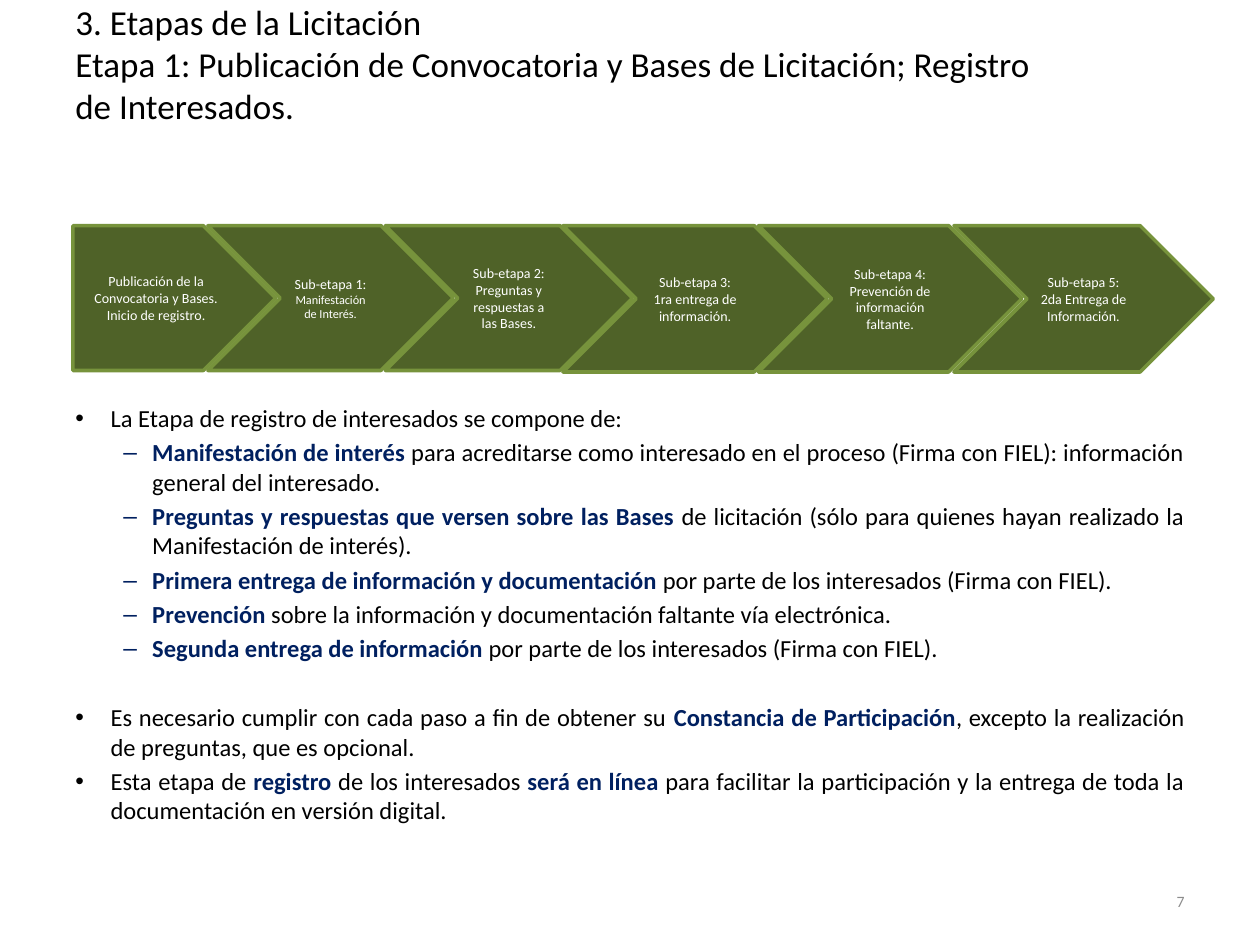
from lxml.etree import SubElement
from pptx import Presentation
from pptx.dml.color import RGBColor
from pptx.enum.shapes import MSO_SHAPE
from pptx.enum.text import MSO_ANCHOR, PP_ALIGN
from pptx.oxml.ns import qn
from pptx.util import Cm, Pt

FONT = "Calibri"
BLACK, WHITE, GREY, NAVY = "000000", "FFFFFF", "8C8C8C", "002060"
DARK_GREEN, GREEN = "4F6228", "77933C"

TITLE = ["3. Etapas de la Licitación",
         "Etapa 1: Publicación de Convocatoria y Bases de Licitación; Registro de Interesados."]
PAGE_NUMBER = "7"

# left, width, height (cm), then lines as (text, size)
STAGE_TOP = 4.55
STAGES = [
    (1.47, 4.09, 2.92, [("Publicación de la Convocatoria y Bases.", 8), ("Inicio de registro.", 8)]),
    (4.19, 4.95, 2.92, [("Sub-etapa 1:", 8), ("Manifestación de Interés.", 7)]),
    (7.77, 4.98, 2.92, [("Sub-etapa 2:", 8), ("Preguntas y respuestas a las Bases.", 8)]),
    (11.35, 5.33, 2.95, [("Sub-etapa 3:", 8), ("1ra entrega de información.", 8)]),
    (15.29, 5.31, 2.95, [("Sub-etapa 4:", 8), ("Prevención de información faltante.", 8)]),
    (19.23, 5.23, 2.95, [("Sub-etapa 5:", 8), ("2da Entrega de Información.", 8)]),
]

# level, space before (pt), then runs as (text, is key term)
POINTS = [
    (0, 0, [("La Etapa de registro de interesados se compone de:", False)]),
    (1, 2.8, [("Manifestación de interés ", True),
              ("para acreditarse como interesado en el proceso (Firma con FIEL): "
               "información general del interesado.", False)]),
    (1, 2.8, [("Preguntas y respuestas que versen sobre las Bases ", True),
              ("de licitación (sólo para quienes hayan realizado la "
               "Manifestación de interés).", False)]),
    (1, 2.8, [("Primera entrega de información y documentación ", True),
              ("por parte de los interesados (Firma con FIEL).", False)]),
    (1, 2.8, [("Prevención", True),
              (" sobre la información y documentación faltante vía electrónica.", False)]),
    (1, 2.8, [("Segunda entrega de información ", True),
              ("por parte de los interesados (Firma con FIEL).", False)]),
    (0, 22.5, [("Es necesario cumplir con cada paso a fin de obtener su ", False),
               ("Constancia de Participación", True),
               (", excepto la realización de preguntas, que es opcional.", False)]),
    (0, 2.8, [("Esta etapa de ", False), ("registro", True),
              (" de los interesados ", False), ("será en línea ", True),
              ("para facilitar la participación y la entrega de toda la "
               "documentación en versión digital.", False)]),
]
# bullet, text indent (cm), hanging indent (cm) for each level
LEVELS = [("•", 0.71, 0.71), ("–", 1.55, 0.58)]


def color(value):
    return RGBColor.from_string(value)


def set_font(font, size, value):
    font.name, font.size = FONT, Pt(size)
    font.color.rgb = color(value)


def add_text_box(slide, left, top, width, height, anchor):
    frame = slide.shapes.add_textbox(Cm(left), Cm(top), Cm(width), Cm(height)).text_frame
    frame.word_wrap = True
    frame.vertical_anchor = anchor
    return frame


def next_paragraph(frame, index):
    return frame.add_paragraph() if index else frame.paragraphs[0]


def set_bullet(paragraph, level, value):
    character, indent, hanging = LEVELS[level]
    properties = paragraph._p.get_or_add_pPr()
    properties.set("marL", str(Cm(indent)))
    properties.set("indent", str(-Cm(hanging)))
    bullet_color = SubElement(properties, qn("a:buClr"))
    SubElement(bullet_color, qn("a:srgbClr"), val=value)
    SubElement(properties, qn("a:buFont"), typeface="Arial")
    SubElement(properties, qn("a:buChar"), char=character)


def add_title(slide):
    frame = add_text_box(slide, 1.27, 0, 19.94, 2.57, MSO_ANCHOR.MIDDLE)
    paragraph = frame.paragraphs[0]
    for index, line in enumerate(TITLE):
        if index:
            paragraph.add_line_break()
        paragraph.add_run().text = line
    set_font(paragraph.font, 20, BLACK)


def add_stages(slide):
    for number, (left, width, height, lines) in enumerate(STAGES):
        kind = MSO_SHAPE.CHEVRON if number else MSO_SHAPE.PENTAGON
        shape = slide.shapes.add_shape(kind, Cm(left), Cm(STAGE_TOP), Cm(width), Cm(height))
        shape.shadow.inherit = False
        shape.fill.solid()
        shape.fill.fore_color.rgb = color(DARK_GREEN)
        shape.line.color.rgb = color(GREEN)
        shape.line.width = Pt(2)
        frame = shape.text_frame
        frame.word_wrap = True
        frame.vertical_anchor = MSO_ANCHOR.MIDDLE
        for index, (text, size) in enumerate(lines):
            paragraph = next_paragraph(frame, index)
            paragraph.text = text
            paragraph.alignment = PP_ALIGN.CENTER
            set_font(paragraph.font, size, WHITE)


def add_points(slide):
    frame = add_text_box(slide, 1.27, 8, 22.86, 8.74, MSO_ANCHOR.TOP)
    for index, (level, space, runs) in enumerate(POINTS):
        paragraph = next_paragraph(frame, index)
        paragraph.level = level
        paragraph.alignment = PP_ALIGN.JUSTIFY
        paragraph.space_before = Pt(space)
        set_bullet(paragraph, level, NAVY if runs[0][1] else BLACK)
        set_font(paragraph.font, 14, BLACK)
        for text, is_key in runs:
            run = paragraph.add_run()
            run.text = text
            if is_key:
                run.font.bold = True
                run.font.color.rgb = color(NAVY)


def add_page_number(slide):
    frame = add_text_box(slide, 18.21, 17.65, 5.92, 1.02, MSO_ANCHOR.MIDDLE)
    paragraph = frame.paragraphs[0]
    paragraph.text = PAGE_NUMBER
    paragraph.alignment = PP_ALIGN.RIGHT
    set_font(paragraph.font, 9, GREY)


def main():
    presentation = Presentation()
    presentation.slide_width, presentation.slide_height = Cm(25.4), Cm(19.05)
    slide = presentation.slides.add_slide(presentation.slide_layouts[6])
    add_title(slide)
    add_points(slide)
    add_page_number(slide)
    add_stages(slide)
    presentation.save("out.pptx")


if __name__ == "__main__":
    main()
